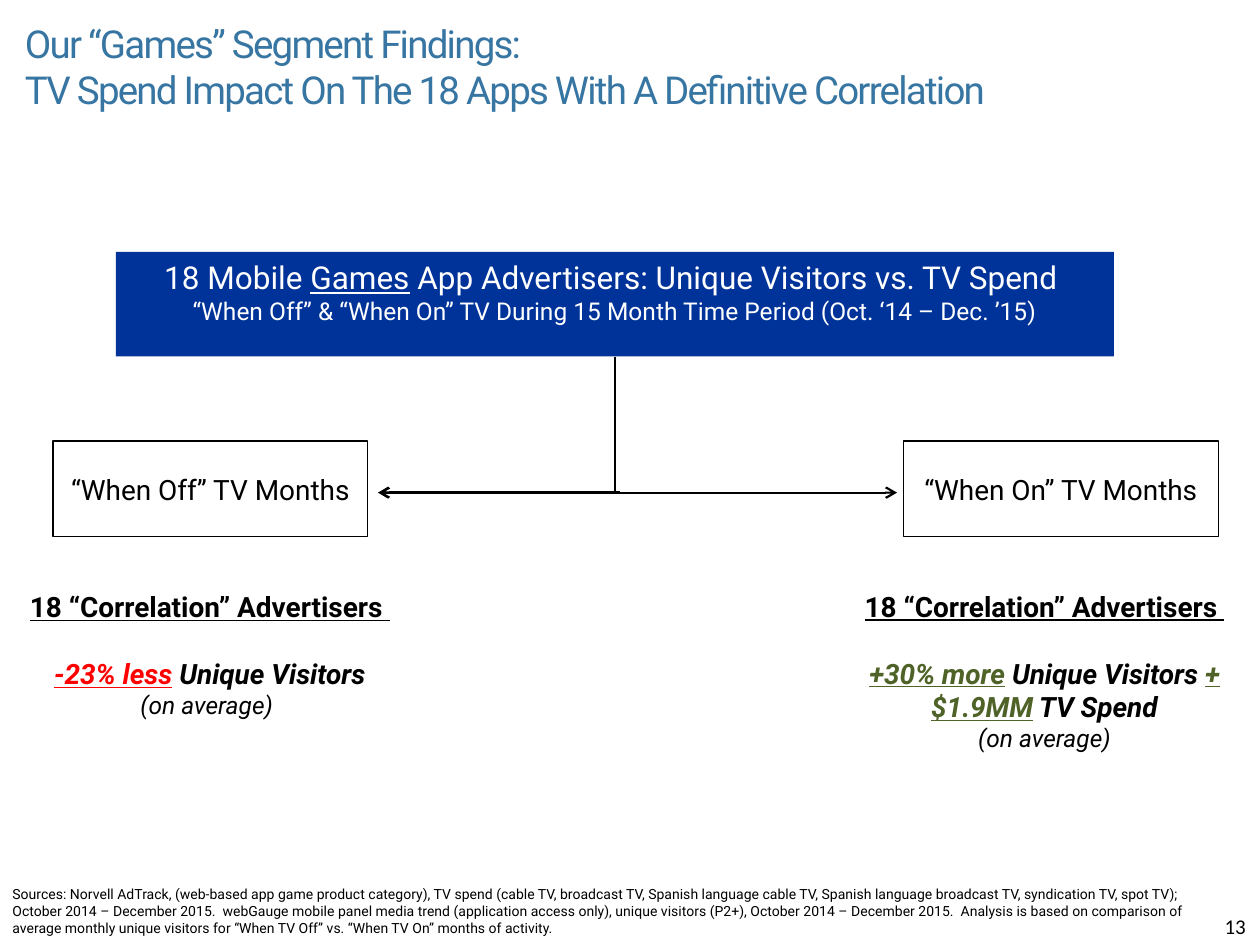
from lxml import etree
from pptx import Presentation
from pptx.dml.color import RGBColor
from pptx.enum import shapes, text
from pptx.oxml.ns import qn
from pptx.util import Inches, Pt

COLORS = {"title": "3775A2", "banner": "003399", "white": "FFFFFF",
          "black": "000000", "loss": "FF0000", "gain": "4F6228"}
MIDDLE = text.MSO_ANCHOR.MIDDLE
CENTER = text.PP_ALIGN.CENTER

# Each paragraph is a list of (wording, format) spans.
TITLE = [[("Our “Games” Segment Findings:", {})],
         [("TV Spend Impact On The 18 Apps With A Definitive Correlation", {})]]
BANNER = [[("18 Mobile ", {}), ("Games", {"underline": True}),
           (" App Advertisers: Unique Visitors vs. TV Spend ", {})],
          [("“When Off” & “When On” TV During 15 Month Time Period (Oct. ‘14 – Dec. ’15)",
            {"size": 14})]]
STRONG = {"bold": True, "italic": True}
LOSS = {**STRONG, "underline": True, "color": "loss"}
GAIN = {**LOSS, "color": "gain"}
AVERAGE = {"italic": True, "size": 14}
HEADING = [("18 “Correlation” Advertisers ", {"bold": True, "underline": True})]
BRANCHES = [
    {"label": "“When Off” TV Months", "left": 0.42, "result_at": (0.12, 4.55, 3.09, 1.29),
     "result": [HEADING,
                [("-23% less", LOSS), (" ", {}), ("Unique Visitors", STRONG)],
                [("(on average) ", AVERAGE)]]},
    {"label": "“When On” TV Months", "left": 7.17, "result_at": (6.75, 4.74, 3.08, 1.17),
     "result": [HEADING,
                [("+30% more", GAIN), (" ", {}), ("Unique Visitors ", STRONG),
                 ("+$1.9MM", GAIN), (" ", STRONG), ("TV Spend", STRONG)],
                [("(on average)", AVERAGE)]]},
]
SOURCES = (
    "Sources: Norvell AdTrack, (web-based app game product category), TV spend (cable TV, "
    "broadcast TV, Spanish language cable TV, Spanish language broadcast TV, syndication TV, "
    "spot TV); October 2014 – December 2015.  webGauge mobile panel media trend (application "
    "access only), unique visitors (P2+), October 2014 – December 2015.  Analysis is based on "
    "comparison of average monthly unique visitors for “When TV Off” vs. “When TV On” months "
    "of activity.")
PAGE_NUMBER = "13"


def rgb(name):
    return RGBColor.from_string(COLORS[name])


def write(box, paragraphs, size, color="black", font="Roboto", align=None,
          anchor=text.MSO_ANCHOR.TOP, tracking=None, gap=0):
    """Fill a box; gap is the space in points before the second paragraph."""
    frame = box.text_frame
    frame.word_wrap = True
    frame.vertical_anchor = anchor
    for index, spans in enumerate(paragraphs):
        para = frame.add_paragraph() if index else frame.paragraphs[0]
        para.alignment = align
        if index == 1 and gap:
            para.space_before = Pt(gap)
        for wording, style in spans:
            span = para.add_run()
            span.text = wording
            span.font.name = font
            span.font.size = Pt(style.get("size", size))
            span.font.color.rgb = rgb(style.get("color", color))
            span.font.bold = style.get("bold", False)
            span.font.italic = style.get("italic", False)
            span.font.underline = style.get("underline", False)
            if tracking:
                span.font._element.set("spc", str(tracking * 100))


def add_text(page, at, paragraphs, size, **style):
    write(page.shapes.add_textbox(*map(Inches, at)), paragraphs, size, **style)


def add_box(page, at, paragraphs, size, fill, line=None, **style):
    box = page.shapes.add_shape(shapes.MSO_SHAPE.RECTANGLE, *map(Inches, at))
    box.shadow.inherit = False
    box.fill.solid()
    box.fill.fore_color.rgb = rgb(fill)
    if line:
        box.line.color.rgb = rgb(line)
        box.line.width = Pt(0.75)
    else:
        box.line.fill.background()
    write(box, paragraphs, size, align=CENTER, **style)


def add_arrow(page, kind, ends, width):
    arrow = page.shapes.add_connector(kind, *map(Inches, ends))
    arrow.line.color.rgb = rgb("black")
    arrow.line.width = Pt(width)
    etree.SubElement(arrow.line._get_or_add_ln(), qn("a:tailEnd"), type="arrow")
    etree.SubElement(arrow._element.spPr, qn("a:effectLst"))
    return arrow


def add_down_right_arrow(page, x1, y1, x2, y2, width):
    """One-bend arrow: a two-part elbow, mirrored and turned by 270 degrees."""
    middle_x, middle_y = (x1 + x2) / 2, (y1 + y2) / 2
    half_w, half_h = (y2 - y1) / 2, (x2 - x1) / 2
    arrow = add_arrow(page, shapes.MSO_CONNECTOR.ELBOW,
                      (middle_x - half_w, middle_y - half_h,
                       middle_x + half_w, middle_y + half_h), width)
    properties = arrow._element.spPr
    properties.find(qn("a:prstGeom")).set("prst", "bentConnector2")
    frame = properties.find(qn("a:xfrm"))
    frame.set("rot", str(270 * 60000))
    frame.set("flipH", "1")


def main():
    deck = Presentation()
    deck.slide_width, deck.slide_height = Inches(10), Inches(7.5)
    page = deck.slides.add_slide(deck.slide_layouts[6])

    add_text(page, (0.1, 0.24, 8.53, 0.57), TITLE, 22, color="title",
             anchor=MIDDLE, tracking=-1)
    add_box(page, (0.92, 2, 7.92, 0.83), BANNER, 18, "banner", color="white")
    add_down_right_arrow(page, 4.88, 2.83, 7.12, 3.91, 1.25)
    add_arrow(page, shapes.MSO_CONNECTOR.STRAIGHT, (4.92, 3.91, 3, 3.91), 1.5)
    for branch in BRANCHES:
        add_box(page, (branch["left"], 3.5, 2.5, 0.76), [[(branch["label"], {})]], 16,
                "white", line="black", anchor=MIDDLE)
        add_text(page, branch["result_at"], branch["result"], 16,
                 align=CENTER, anchor=MIDDLE, gap=19)
    add_text(page, (0, 6.98, 9.67, 0.5), [[(SOURCES, {})]], 8)
    add_text(page, (9.62, 7.2, 0.38, 0.3), [[(PAGE_NUMBER, {})]], 12, font="Calibri")
    deck.save("out.pptx")


if __name__ == "__main__":
    main()
